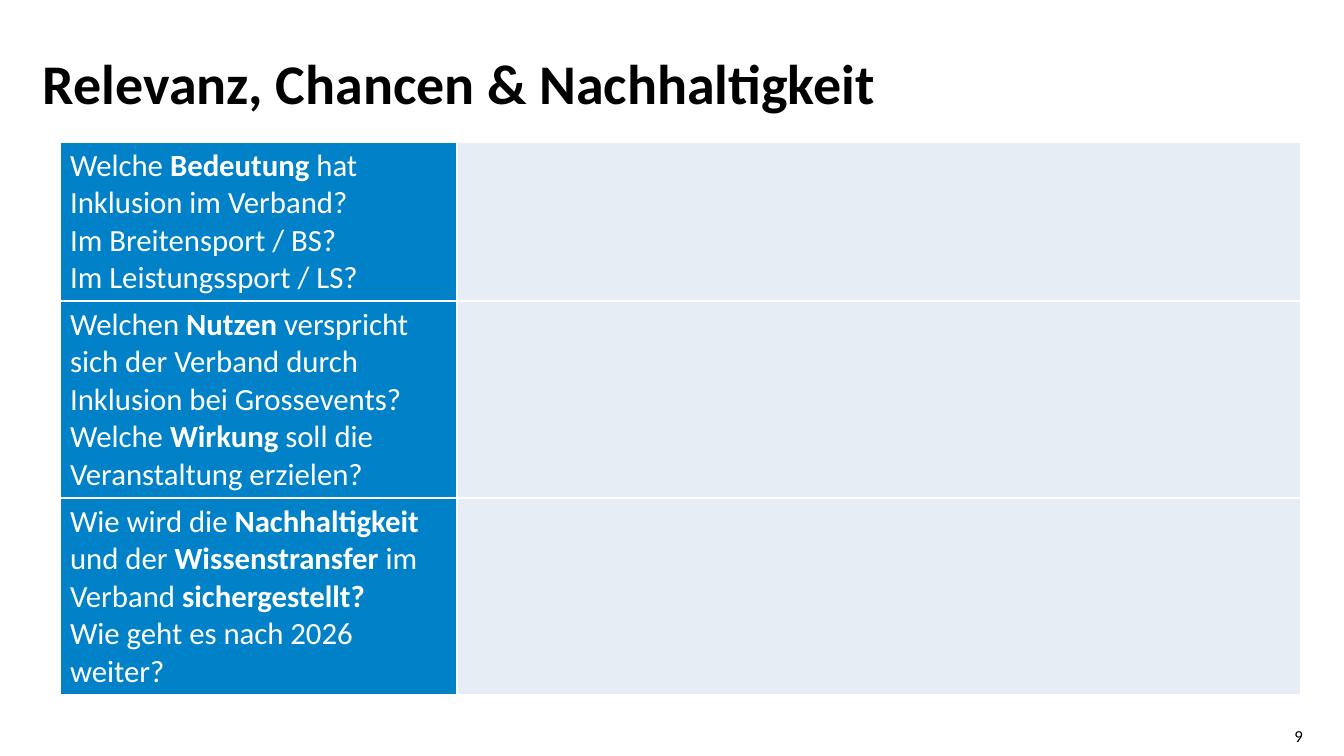
from pptx import Presentation
from pptx.dml.color import RGBColor
from pptx.enum.text import MSO_ANCHOR, PP_ALIGN
from pptx.oxml import parse_xml
from pptx.oxml.ns import nsdecls
from pptx.util import Emu, Pt

PX = 914400 / 100.8
BLACK, WHITE, BLUE, PALE = "000000", "FFFFFF", "0081C8", "E7EDF5"


def px(*lengths):
    return [Emu(round(length * PX)) for length in lengths]


def add_run(paragraph, text, size, color, bold=False):
    run = paragraph.add_run()
    run.text = text
    run.font.name = "Calibri"
    run.font.size = Pt(size)
    run.font.bold = bold
    run.font.color.rgb = RGBColor.from_string(color)


presentation = Presentation()
presentation.slide_width, presentation.slide_height = px(1344, 756)
slide = presentation.slides.add_slide(presentation.slide_layouts[6])

# Title and page number
labels = [
    ("Relevanz, Chancen & Nachhaltigkeit", (43, 56, 1008, 86), 40, True,
     PP_ALIGN.LEFT, MSO_ANCHOR.TOP, 0.9),
    ("9", (1256, 726, 47, 20), 12, False,
     PP_ALIGN.RIGHT, MSO_ANCHOR.MIDDLE, 1.0),
]
for text, place, size, bold, align, anchor, spacing in labels:
    label = slide.shapes.add_textbox(*px(*place)).text_frame
    label.word_wrap = True
    label.margin_left = label.margin_right = 0
    label.margin_top = label.margin_bottom = 0
    label.vertical_anchor = anchor
    paragraph = label.paragraphs[0]
    paragraph.alignment = align
    paragraph.line_spacing = spacing
    add_run(paragraph, text, size, BLACK, bold)

# Questions: rows of paragraphs, whose runs alternate regular and bold
questions = [
    [["Welche ", "Bedeutung", " hat Inklusion im Verband?"],
     ["Im Breitensport / BS?"],
     ["Im Leistungssport / LS?"]],
    [["Welchen ", "Nutzen",
      " verspricht sich der Verband durch Inklusion bei Grossevents?"],
     ["Welche ", "Wirkung", " soll die Veranstaltung erzielen?"]],
    [["Wie wird die ", "Nachhaltigkeit ", "und der ", "Wissenstransfer ",
      "im Verband ", "sichergestellt?"],
     ["Wie geht es nach 2026 weiter?"]],
]
row_heights = px(159, 197, 197)
column_widths = px(397, 844)

# Table with a question column and an empty answer column
grid = slide.shapes.add_table(
    len(questions), 2, *px(60, 142, 1241, 553)).table
grid.first_row = grid.horz_banding = False
for column, width in zip(grid.columns, column_widths):
    column.width = width
for row, height, paragraphs in zip(grid.rows, row_heights, questions):
    row.height = height
    for cell, fill in zip(row.cells, (BLUE, PALE)):
        # Borders come before the fill in the cell properties
        properties = cell._tc.get_or_add_tcPr()
        for side in ("lnL", "lnR", "lnT", "lnB"):
            properties.append(parse_xml(
                f'<a:{side} {nsdecls("a")} w="12700"><a:solidFill>'
                f'<a:srgbClr val="{WHITE}"/></a:solidFill></a:{side}>'))
        cell.fill.solid()
        cell.fill.fore_color.rgb = RGBColor.from_string(fill)

    question = row.cells[0].text_frame
    for index, runs in enumerate(paragraphs):
        paragraph = question.add_paragraph() if index else question.paragraphs[0]
        for position, text in enumerate(runs):
            add_run(paragraph, text, 22, WHITE, bold=position % 2 == 1)

presentation.save("out.pptx")
